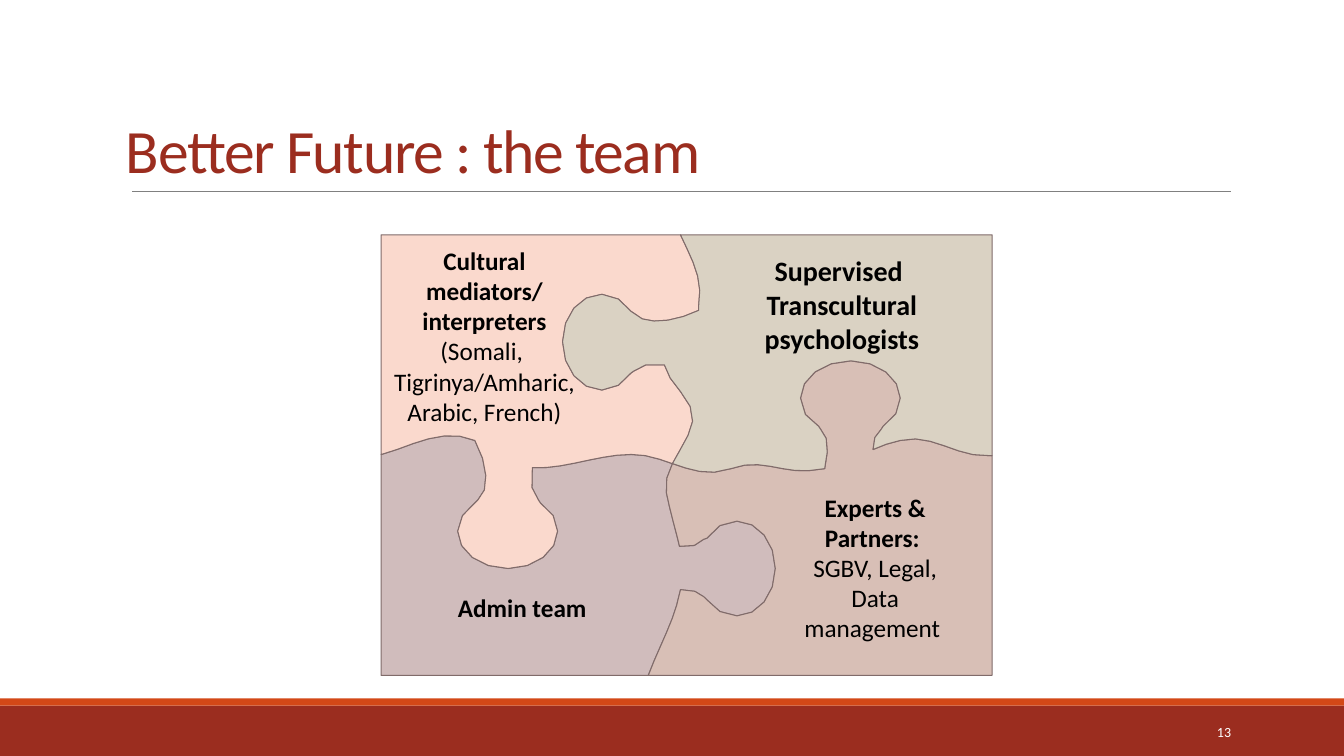
from dataclasses import dataclass
from math import dist

from lxml import etree
from pptx import Presentation
from pptx.dml.color import RGBColor
from pptx.enum.shapes import MSO_CONNECTOR, MSO_SHAPE
from pptx.enum.text import MSO_ANCHOR, PP_ALIGN
from pptx.oxml.ns import qn
from pptx.util import Pt

RECTANGLE = MSO_SHAPE.RECTANGLE
STRAIGHT = MSO_CONNECTOR.STRAIGHT
TOP, MIDDLE, BOTTOM = MSO_ANCHOR.TOP, MSO_ANCHOR.MIDDLE, MSO_ANCHOR.BOTTOM
LEFT, CENTER, RIGHT = PP_ALIGN.LEFT, PP_ALIGN.CENTER, PP_ALIGN.RIGHT

EMU_PER_PX = 9144
CHORD = 14


@dataclass(frozen=True)
class Theme:
    font: str = "Calibri"
    brick: str = "9B2D1F"
    orange: str = "D34817"
    rule: str = "808080"
    outline: str = "806B6A"
    mauve: str = "D0BCBC"
    rose: str = "D8BFB6"
    peach: str = "FAD9CD"
    sand: str = "DAD2C3"
    white: str = "FFFFFF"
    black: str = "000000"
    title_size: int = 44
    lead_size: int = 20
    label_size: int = 18
    number_size: int = 10


THEME = Theme()

PUZZLE_LEFT, PUZZLE_TOP, PUZZLE_RIGHT, PUZZLE_BOTTOM = 378, 233, 984, 670
CENTRE = (667, 460)

NORTH_CURVES = [
    (686, 257, 698, 276, 693, 304), (693, 306, 693, 307, 693, 308),
    (668, 320, 639, 323, 629, 311), (628, 310, 627, 309, 626, 309),
    (619, 299, 609, 292, 597, 292), (575, 292, 558, 313, 558, 339),
    (558, 365, 575, 387, 597, 387), (609, 387, 619, 380, 626, 370),
    (627, 369, 628, 369, 629, 368), (634, 362, 645, 360, 659, 362),
    (661, 379, 691, 398, 687, 418), (685, 432, 674, 446, 667, 460),
]
EAST_CURVES = [
    (685, 466, 702, 473, 725, 465), (754, 454, 774, 469, 802, 467),
    (807, 467, 813, 466, 818, 465), (822, 448, 822, 432, 814, 426),
    (812, 425, 812, 424, 812, 423), (801, 417, 794, 407, 794, 395),
    (794, 375, 816, 358, 844, 358), (871, 358, 893, 375, 893, 395),
    (893, 406, 887, 416, 876, 423), (876, 424, 875, 425, 874, 426),
    (868, 430, 866, 437, 866, 446), (874, 442, 884, 439, 893, 437),
    (924, 429, 949, 454, 980, 452), (981, 452, 983, 452, 984, 452),
]
SOUTH_CURVES = [
    (662, 470, 659, 479, 661, 489), (665, 509, 670, 525, 674, 542),
    (685, 543, 694, 541, 698, 535), (699, 534, 700, 534, 701, 534),
    (708, 523, 719, 517, 731, 517), (752, 517, 769, 538, 769, 564),
    (769, 590, 752, 611, 731, 611), (719, 611, 708, 605, 701, 595),
    (700, 594, 699, 594, 698, 592), (694, 587, 686, 585, 675, 585),
    (674, 590, 673, 595, 671, 601), (665, 622, 652, 646, 643, 670),
]
WEST_CURVES = [
    (389, 448, 399, 444, 410, 440), (430, 433, 451, 428, 471, 437),
    (484, 460, 486, 487, 474, 496), (472, 498, 471, 498, 471, 499),
    (461, 506, 454, 516, 454, 527), (454, 547, 476, 564, 504, 564),
    (531, 564, 553, 547, 553, 527), (553, 516, 547, 506, 536, 499),
    (536, 498, 535, 498, 534, 496), (527, 491, 526, 479, 528, 464),
    (565, 466, 603, 446, 640, 452), (650, 454, 659, 457, 667, 460),
]


def px(length):
    return round(length * EMU_PER_PX)


def color(code):
    return RGBColor.from_string(code)


def trace_seam(start, curves):
    points = [start]
    for x1, y1, x2, y2, x3, y3 in curves:
        x0, y0 = points[-1]
        steps = max(1, round(dist((x0, y0), (x3, y3)) / CHORD))
        for step in range(1, steps + 1):
            t = step / steps
            u = 1 - t
            a, b, c, d = u ** 3, 3 * u * u * t, 3 * u * t * t, t ** 3
            points.append((a * x0 + b * x1 + c * x2 + d * x3,
                           a * y0 + b * y1 + c * y2 + d * y3))
    return points


def add_band(page, top, height, fill):
    band = page.shapes.add_shape(RECTANGLE, 0, px(top), px(1333), px(height))
    band.shadow.inherit = False
    band.fill.solid()
    band.fill.fore_color.rgb = color(fill)
    band.line.fill.background()


def add_rule(page, left, right, y):
    rule = page.shapes.add_connector(STRAIGHT, px(left), px(y), px(right), px(y))
    rule.line.color.rgb = color(THEME.rule)
    rule.line.width = Pt(0.5)
    etree.SubElement(rule._element.spPr, qn("a:effectLst"))


def add_piece(page, points, fill):
    start, *rest = [(px(x), px(y)) for x, y in points]
    builder = page.shapes.build_freeform(*start)
    builder.add_line_segments(rest, close=True)
    piece = builder.convert_to_shape()
    piece.shadow.inherit = False
    piece.fill.solid()
    piece.fill.fore_color.rgb = color(fill)
    piece.line.color.rgb = color(THEME.outline)
    piece.line.width = Pt(0.75)


def add_text(page, place, lines, size, ink=THEME.black, align=CENTER,
             anchor=TOP, side_inset=10):
    box = page.shapes.add_textbox(*map(px, place))
    frame = box.text_frame
    frame.word_wrap = True
    frame.vertical_anchor = anchor
    frame.margin_left = frame.margin_right = px(side_inset)
    frame.margin_top = frame.margin_bottom = px(5)
    for index, (text, bold) in enumerate(lines):
        para = frame.add_paragraph() if index else frame.paragraphs[0]
        para.add_run().text = text
        para.alignment = align
        para.font.name = THEME.font
        para.font.size = Pt(size)
        para.font.bold = bold
        para.font.color.rgb = color(ink)
    return frame


def add_title(page, text):
    frame = add_text(page, (120, 31, 1100, 159), [(text, False)],
                     THEME.title_size, THEME.brick, LEFT, BOTTOM, 5)
    para = frame.paragraphs[0]
    para.line_spacing = 0.85
    para.runs[0]._r.get_or_add_rPr().set("spc", "-100")


def add_puzzle(page):
    north = trace_seam((675, PUZZLE_TOP), NORTH_CURVES)
    east = trace_seam(CENTRE, EAST_CURVES)
    south = trace_seam(CENTRE, SOUTH_CURVES)
    west = trace_seam((PUZZLE_LEFT, 451), WEST_CURVES)
    add_piece(page, west + south[1:] + [(PUZZLE_LEFT, PUZZLE_BOTTOM)], THEME.mauve)
    add_piece(page, east + [(PUZZLE_RIGHT, PUZZLE_BOTTOM)] + south[:0:-1], THEME.rose)
    add_piece(page, [(PUZZLE_LEFT, PUZZLE_TOP)] + north + west[-2::-1], THEME.peach)
    add_piece(page, north + east[1:] + [(PUZZLE_RIGHT, PUZZLE_TOP)], THEME.sand)


def main():
    deck = Presentation()
    deck.slide_width, deck.slide_height = px(1333), px(750)
    page = deck.slides.add_slide(deck.slide_layouts[6])

    add_band(page, 700, 50, THEME.brick)
    add_band(page, 693, 7, THEME.orange)
    add_rule(page, 131, 1221, 190)
    add_text(page, (1200, 714, 26, 25), [("13", False)], THEME.number_size,
             THEME.white, RIGHT, MIDDLE, 5)
    add_title(page, "Better Future : the team")

    add_puzzle(page)
    add_text(page, (711, 247, 248, 111),
             [("Supervised ", True), ("Transcultural psychologists", True)],
             THEME.lead_size)
    add_text(page, (378, 238, 205, 192),
             [("Cultural mediators/", True), ("interpreters", True),
              ("(Somali, ", False), ("Tigrinya/Amharic, Arabic, French)", False)],
             THEME.label_size)
    add_text(page, (428, 583, 180, 40), [("Admin team", True)], THEME.label_size)
    add_text(page, (777, 483, 182, 162),
             [("Experts & Partners: ", True),
              ("SGBV, Legal, Data management ", False)],
             THEME.label_size)
    deck.save("out.pptx")


if __name__ == "__main__":
    main()
